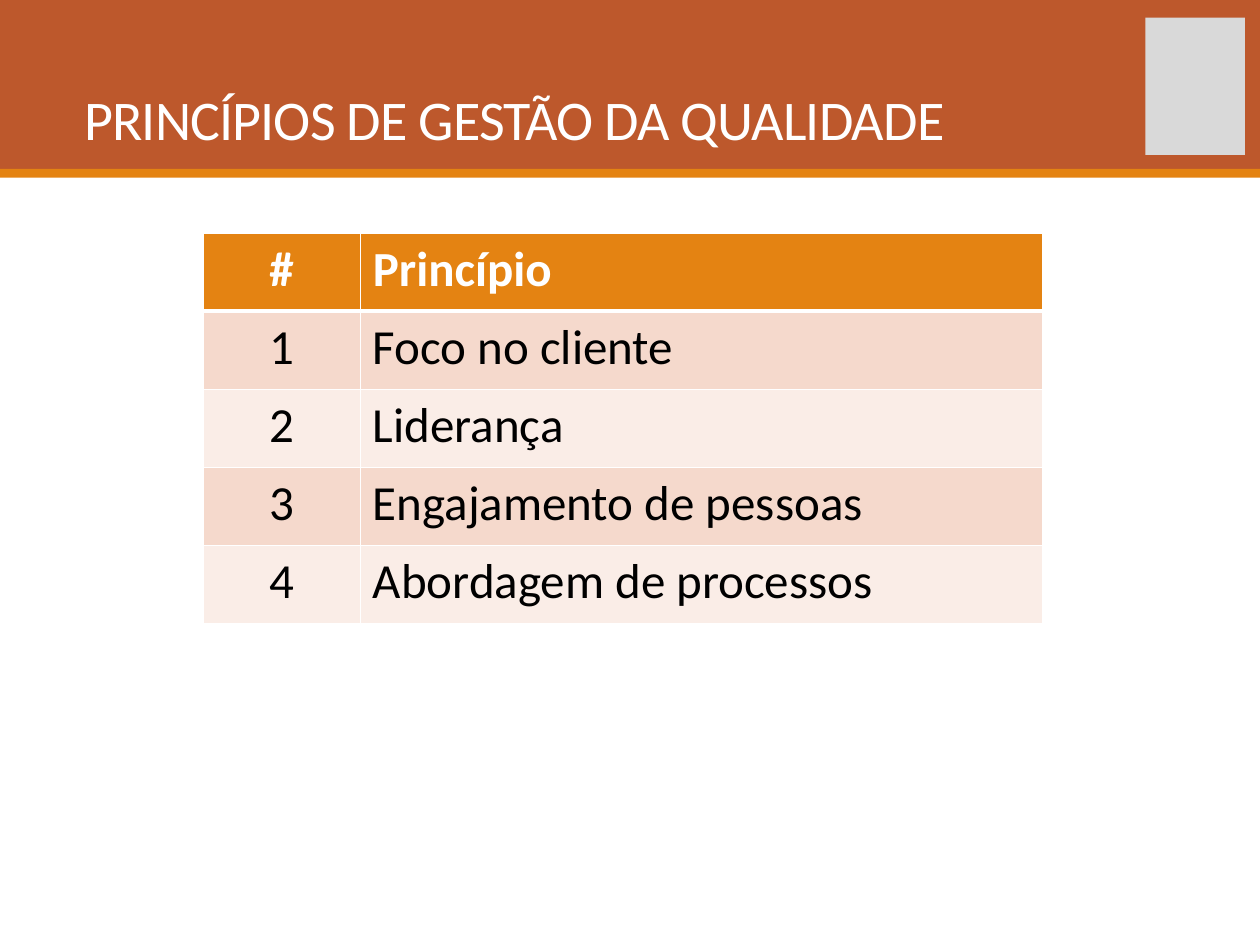
"""Build the slide on the principles of quality management."""
import pptx
import pptx.dml.color
import pptx.enum.shapes
import pptx.enum.text
import pptx.oxml
import pptx.oxml.ns
import pptx.util

Inches = pptx.util.Inches
Pt = pptx.util.Pt
ALIGN = pptx.enum.text.PP_ALIGN

FONT = "Calibri"
COLORS = {
    "banner": "BD582C",
    "accent": "E48312",
    "logo": "D9D9D9",
    "band_dark": "F5D9CC",
    "band_light": "FAEDE7",
    "white": "FFFFFF",
    "black": "000000",
}
PRINCIPLES = [
    "Foco no cliente",
    "Liderança",
    "Engajamento de pessoas",
    "Abordagem de processos",
]
COLUMN_WIDTHS = [1.25, 5.42]
ROW_HEIGHT = 0.62


def rgb(name):
    return pptx.dml.color.RGBColor.from_string(COLORS[name])


def style_font(font, size, color, bold=False):
    font.name = FONT
    font.size = Pt(size)
    font.bold = bold
    font.color.rgb = rgb(color)


def add_rectangle(slide, left, top, width, height, color):
    shape = slide.shapes.add_shape(
        pptx.enum.shapes.MSO_SHAPE.RECTANGLE,
        Inches(left), Inches(top), Inches(width), Inches(height),
    )
    shape.shadow.inherit = False
    shape.fill.solid()
    shape.fill.fore_color.rgb = rgb(color)
    shape.line.fill.background()


def add_title(slide, text):
    shape = slide.shapes.add_textbox(Inches(0.57), Inches(0.33), Inches(8.51), Inches(0.88))
    text_frame = shape.text_frame
    text_frame.word_wrap = True
    text_frame.vertical_anchor = pptx.enum.text.MSO_ANCHOR.BOTTOM
    text_frame.margin_top = text_frame.margin_bottom = 0
    text_frame.text = text
    paragraph = text_frame.paragraphs[0]
    paragraph.line_spacing = 0.85
    run = paragraph.runs[0]
    style_font(run.font, 32, "white")
    run.font._element.set("spc", "-50")


def set_borders(cell, widths):
    properties = cell._tc.get_or_add_tcPr()
    for side, width in widths.items():
        properties.append(pptx.oxml.parse_xml(
            f'<a:ln{side} {pptx.oxml.ns.nsdecls("a")} w="{Pt(width)}"><a:solidFill>'
            f'<a:srgbClr val="{COLORS["white"]}"/></a:solidFill></a:ln{side}>'
        ))


def fill_cell(cell, text, alignment, row):
    is_header = row == 0
    set_borders(cell, {
        "L": 1, "R": 1, "T": 3 if row == 1 else 1, "B": 3 if is_header else 1,
    })
    band = "band_dark" if row % 2 else "band_light"
    cell.fill.solid()
    cell.fill.fore_color.rgb = rgb("accent" if is_header else band)
    cell.text_frame.text = text
    paragraph = cell.text_frame.paragraphs[0]
    paragraph.alignment = alignment
    style_font(paragraph.runs[0].font, 28, "white" if is_header else "black", is_header)


def add_principles_table(slide):
    rows = [("#", "Princípio")]
    rows += [(str(number), name) for number, name in enumerate(PRINCIPLES, 1)]
    table = slide.shapes.add_table(
        len(rows), len(COLUMN_WIDTHS), Inches(1.61), Inches(1.85),
        Inches(sum(COLUMN_WIDTHS)), Inches(ROW_HEIGHT * len(rows)),
    ).table
    for column, width in zip(table.columns, COLUMN_WIDTHS):
        column.width = Inches(width)
    for row, texts in enumerate(rows):
        table.rows[row].height = Inches(ROW_HEIGHT)
        for column, (text, alignment) in enumerate(zip(texts, (ALIGN.CENTER, ALIGN.LEFT))):
            fill_cell(table.cell(row, column), text, alignment, row)


def main():
    presentation = pptx.Presentation()
    presentation.slide_width = Inches(10)
    presentation.slide_height = Inches(7.5)
    slide = presentation.slides.add_slide(presentation.slide_layouts[6])
    add_rectangle(slide, 0, 0, 10, 1.34, "banner")
    add_rectangle(slide, 0, 1.34, 10, 0.07, "accent")
    add_rectangle(slide, 9.09, 0.14, 0.79, 1.09, "logo")
    add_principles_table(slide)
    add_title(slide, "PRINCÍPIOS DE GESTÃO DA QUALIDADE")
    presentation.save("out.pptx")


if __name__ == "__main__":
    main()
